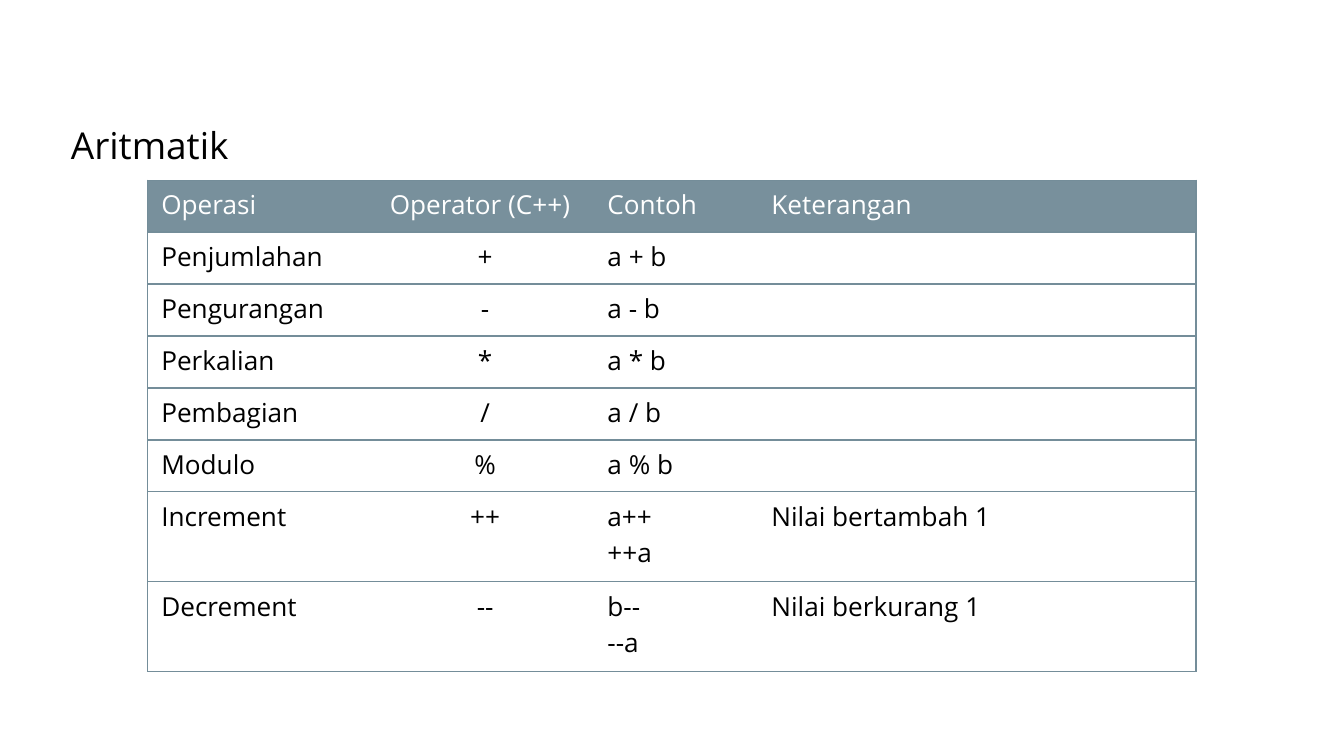
from lxml import etree
from pptx import Presentation
from pptx.dml.color import RGBColor
from pptx.enum.text import PP_ALIGN
from pptx.oxml.ns import qn
from pptx.util import Inches, Pt

BLACK = RGBColor(0x00, 0x00, 0x00)
WHITE = RGBColor(0xFF, 0xFF, 0xFF)
HEADER = RGBColor(0x78, 0x90, 0x9C)
BORDER = RGBColor(0x74, 0x8D, 0x99)

TABLE_HEIGHT = 3.66
TALL_ROW = 0.67
COL_WIDTHS = [1.7, 1.62, 1.22, 3.26]
ROWS = [
    ("Operasi", "Operator (C++)", "Contoh", "Keterangan"),
    ("Penjumlahan", "+", "a + b", ""),
    ("Pengurangan", "-", "a - b", ""),
    ("Perkalian", "*", "a * b", ""),
    ("Pembagian", "/", "a / b", ""),
    ("Modulo", "%", "a % b", ""),
    ("Increment", "++", "a++\n++a", "Nilai bertambah 1"),
    ("Decrement", "--", "b--\n--a", "Nilai berkurang 1"),
]


def write_text(tf, text, size=14, color=BLACK, align=PP_ALIGN.LEFT):
    for i, line in enumerate(text.split("\n")):
        p = tf.paragraphs[0] if i == 0 else tf.add_paragraph()
        p.alignment = align
        if line:
            r = p.add_run()
            r.text = line
            r.font.name = "Open Sans"
            r.font.size = Pt(size)
            r.font.color.rgb = color
        else:
            # Keep empty cells from growing to the default text size
            etree.SubElement(p._p, qn("a:endParaRPr"), sz=str(size * 100))


def set_borders(cell, visible):
    tcPr = cell._tc.get_or_add_tcPr()
    for i, side in enumerate("LRTB"):
        ln = etree.Element(qn(f"a:ln{side}"), w=str(Pt(0.75)))
        if side in visible:
            fill = etree.SubElement(ln, qn("a:solidFill"))
            etree.SubElement(fill, qn("a:srgbClr"), val=str(BORDER))
        else:
            etree.SubElement(ln, qn("a:noFill"))
        tcPr.insert(i, ln)


# Widescreen 16:9 slide
prs = Presentation()
prs.slide_width = Inches(10)
prs.slide_height = Inches(10 * 9 / 16)
s = prs.slides.add_slide(prs.slide_layouts[6])

# Title
sp = s.shapes.add_textbox(Inches(0.43), Inches(0.81), Inches(9.14), Inches(0.43))
tf = sp.text_frame
tf.word_wrap = True
tf.margin_left = tf.margin_right = tf.margin_top = tf.margin_bottom = Inches(0.1)
write_text(tf, "Aritmatik", size=19.8)

# Operator table
table = s.shapes.add_table(len(ROWS), len(COL_WIDTHS), Inches(1.1), Inches(1.34),
                           Inches(sum(COL_WIDTHS)), Inches(TABLE_HEIGHT)).table
table.first_row = table.horz_banding = False
for col, width in zip(table.columns, COL_WIDTHS):
    col.width = Inches(width)

# Single-line rows share the height left by the two-line rows
tall = [any("\n" in text for text in texts) for texts in ROWS]
short_row = (TABLE_HEIGHT - TALL_ROW * sum(tall)) / tall.count(False)

for i, texts in enumerate(ROWS):
    table.rows[i].height = Inches(TALL_ROW if tall[i] else short_row)
    for j, text in enumerate(texts):
        cell = table.cell(i, j)
        is_header = i == 0
        centered = j == 1 and not is_header
        write_text(cell.text_frame, text, color=WHITE if is_header else BLACK,
                   align=PP_ALIGN.CENTER if centered else PP_ALIGN.LEFT)
        if is_header:
            cell.fill.solid()
            cell.fill.fore_color.rgb = HEADER
        else:
            cell.fill.background()
        # Rules between rows and around the table, none between columns
        sides = "TB"
        if j == 0:
            sides += "L"
        if j == len(texts) - 1:
            sides += "R"
        set_borders(cell, sides)

prs.save("out.pptx")
